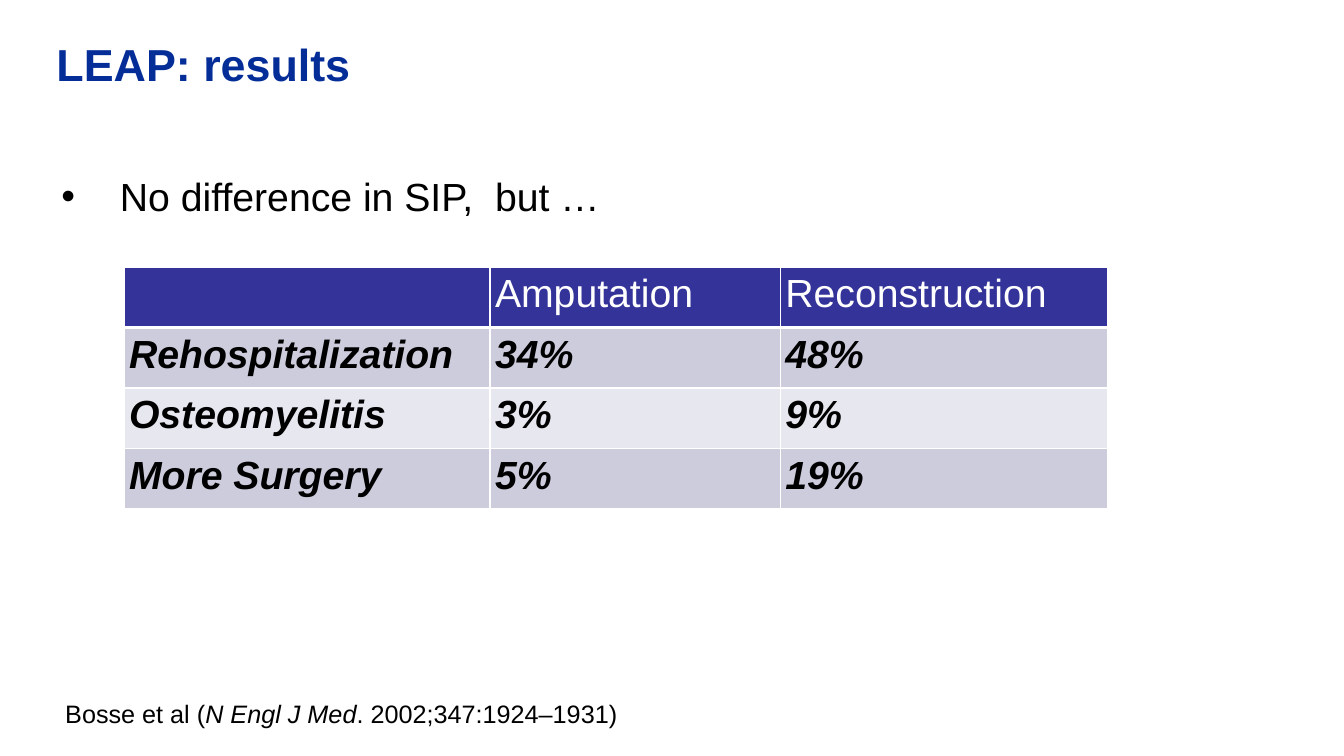
from dataclasses import dataclass

from lxml.etree import SubElement
from pptx import Presentation
from pptx.dml.color import RGBColor
from pptx.enum.text import MSO_ANCHOR, MSO_AUTO_SIZE, PP_ALIGN
from pptx.oxml.ns import qn
from pptx.util import Inches, Pt


@dataclass(frozen=True)
class Theme:
    font: str = "Arial"
    title_color: str = "042D98"
    text_color: str = "000000"
    light: str = "FFFFFF"
    header_fill: str = "333399"
    band_fills: tuple = ("CCCCDD", "E7E7EF")
    title_size: int = 32
    body_size: int = 28
    citation_size: int = 18
    rule: int = 1
    header_rule: int = 3
    inset: float = 0.05


THEME = Theme()

COLUMN_WIDTHS = (3.63, 2.88, 3.25)
ROW_HEIGHT = 0.6
OUTCOMES = (
    ("", "Amputation", "Reconstruction"),
    ("Rehospitalization", "34%", "48%"),
    ("Osteomyelitis", "3%", "9%"),
    ("More Surgery", "5%", "19%"),
)


def add_text(paragraph, text, size=THEME.body_size, color=THEME.text_color,
             bold=False, italic=False):
    run = paragraph.add_run()
    run.text = text
    font = run.font
    font.name, font.size = THEME.font, Pt(size)
    font.bold, font.italic = bold, italic
    font.color.rgb = RGBColor.from_string(color)


def set_frame(frame, inset=THEME.inset, wrap=True, auto_size=MSO_AUTO_SIZE.NONE):
    """Set insets, wrapping and top anchor, and return the first paragraph."""
    frame.margin_left = frame.margin_right = Inches(inset)
    frame.margin_top = frame.margin_bottom = Inches(inset)
    frame.word_wrap = wrap
    frame.auto_size = auto_size
    frame.vertical_anchor = MSO_ANCHOR.TOP
    paragraph = frame.paragraphs[0]
    paragraph.alignment = PP_ALIGN.LEFT
    paragraph.space_before = Pt(0)
    return paragraph


def place(shape, left, top, width, height):
    shape.left, shape.top = Inches(left), Inches(top)
    shape.width, shape.height = Inches(width), Inches(height)


def add_bullet(paragraph, indent):
    properties = paragraph._p.get_or_add_pPr()
    properties.set("marL", str(Inches(indent)))
    properties.set("indent", str(-Inches(indent)))
    SubElement(properties, qn("a:buFont"), typeface=THEME.font)
    SubElement(properties, qn("a:buChar"), char="•")


def set_borders(cell, top, bottom):
    widths = {"L": THEME.rule, "R": THEME.rule, "T": top, "B": bottom}
    properties = cell._tc.get_or_add_tcPr()
    for side, width in widths.items():
        line = SubElement(properties, qn(f"a:ln{side}"), w=str(Pt(width)))
        fill = SubElement(line, qn("a:solidFill"))
        SubElement(fill, qn("a:srgbClr"), val=THEME.light)


def fill_cell(cell, text, row):
    header = row == 0
    set_borders(cell, top=THEME.header_rule if row == 1 else THEME.rule,
                bottom=THEME.header_rule if header else THEME.rule)
    cell.margin_left = cell.margin_right = Inches(THEME.inset)
    cell.margin_top = cell.margin_bottom = Inches(THEME.inset)
    cell.fill.solid()
    color = THEME.header_fill if header else THEME.band_fills[(row - 1) % 2]
    cell.fill.fore_color.rgb = RGBColor.from_string(color)
    if text:
        paragraph = cell.text_frame.paragraphs[0]
        paragraph.alignment = PP_ALIGN.LEFT
        add_text(paragraph, text, color=THEME.light if header else THEME.text_color,
                 bold=not header, italic=not header)


def add_outcomes(slide, left, top):
    outcomes = slide.shapes.add_table(
        len(OUTCOMES), len(COLUMN_WIDTHS), Inches(left), Inches(top),
        Inches(sum(COLUMN_WIDTHS)), Inches(ROW_HEIGHT * len(OUTCOMES))).table
    for column, width in zip(outcomes.columns, COLUMN_WIDTHS):
        column.width = Inches(width)
    for row, values in enumerate(OUTCOMES):
        outcomes.rows[row].height = Inches(ROW_HEIGHT)
        for column, value in enumerate(values):
            fill_cell(outcomes.cell(row, column), value, row)


def add_citation(slide):
    citation = slide.shapes.add_textbox(
        Inches(0.57), Inches(6.88), Inches(5.63), Inches(0.4))
    paragraph = set_frame(citation.text_frame, wrap=False,
                          auto_size=MSO_AUTO_SIZE.SHAPE_TO_FIT_TEXT)
    paragraph.alignment = PP_ALIGN.CENTER
    for text, italic in (("Bosse et al (", False), ("N Engl J Med", True),
                         (". 2002;347:1924–1931)", False)):
        add_text(paragraph, text, size=THEME.citation_size, italic=italic)


def main():
    deck = Presentation()
    deck.slide_width, deck.slide_height = Inches(13.33), Inches(7.5)
    slide = deck.slides.add_slide(deck.slide_layouts[1])

    title = slide.shapes.title
    place(title, 0.56, 0.42, 12.07, 1.25)
    heading = set_frame(title.text_frame, inset=0)
    heading.line_spacing = 0.9
    add_text(heading, "LEAP: results", size=THEME.title_size,
             color=THEME.title_color, bold=True)

    body = slide.placeholders[1]
    place(body, 0.56, 1.66, 12.07, 5.84)
    finding = set_frame(body.text_frame)
    add_bullet(finding, 0.58)
    add_text(finding, "No difference in SIP,  but …")

    add_outcomes(slide, 1.23, 2.65)
    add_citation(slide)
    deck.save("out.pptx")


if __name__ == "__main__":
    main()
